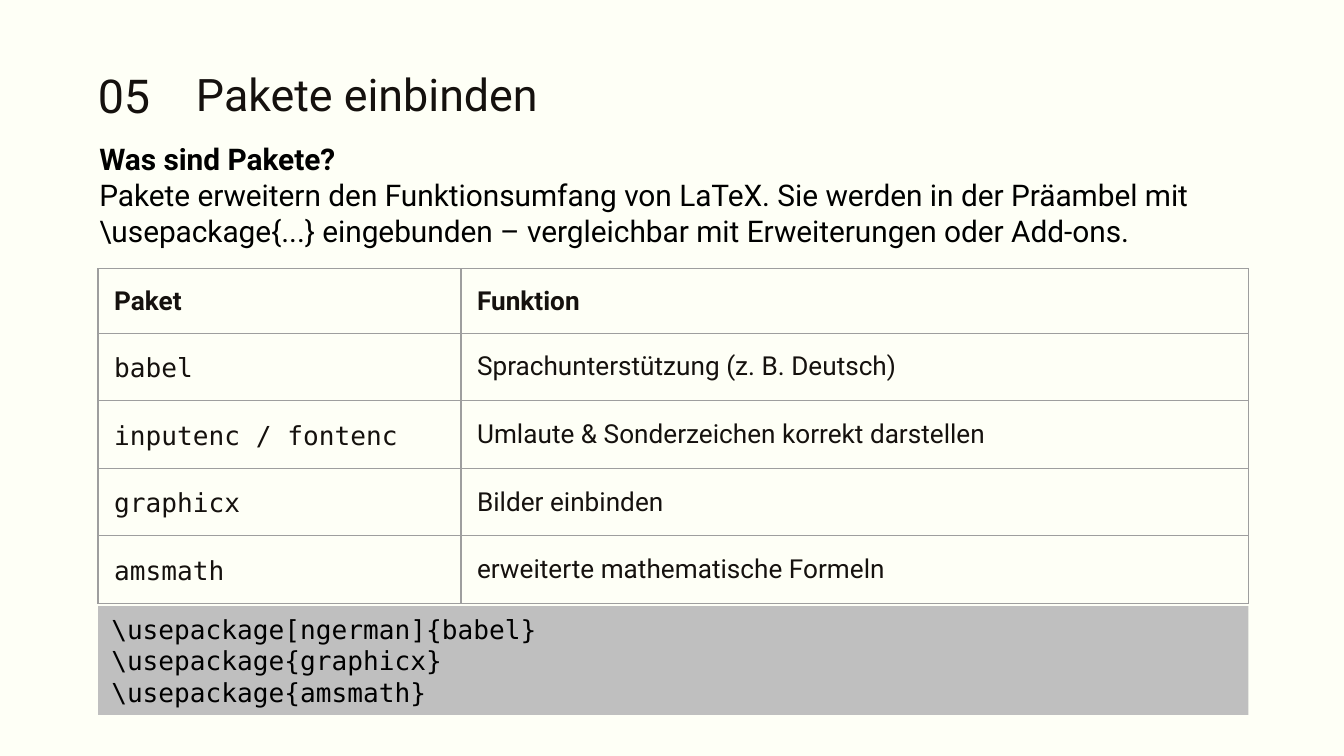
from lxml import etree
from pptx import Presentation
from pptx.dml.color import RGBColor
from pptx.enum.shapes import MSO_SHAPE
from pptx.enum.text import MSO_ANCHOR, PP_ALIGN
from pptx.oxml.ns import qn
from pptx.util import Inches, Pt

RECT = MSO_SHAPE.RECTANGLE
TOP, MIDDLE = MSO_ANCHOR.TOP, MSO_ANCHOR.MIDDLE
LEFT = PP_ALIGN.LEFT
SANS, MONO = "Roboto", "DejaVu Sans Mono"
PAPER, INK, BLACK = "FEFFF6", "15110E", "000000"
GRID, CODE_FILL = "9E9E9E", "BFBFBF"
SLIDE_W = 10
SLIDE_H = SLIDE_W * 9 / 16

PACKAGES = [
    ("Paket", "Funktion"),
    ("babel", "Sprachunterstützung (z. B. Deutsch)"),
    ("inputenc\u00a0/\u00a0fontenc", "Umlaute & Sonderzeichen korrekt darstellen"),
    ("graphicx", "Bilder einbinden"),
    ("amsmath", "erweiterte mathematische Formeln"),
]
INTRO = [
    "Was sind Pakete?",
    "Pakete erweitern den Funktionsumfang von LaTeX. Sie werden in der Präambel mit "
    "\\usepackage{...} eingebunden – vergleichbar mit Erweiterungen oder Add-ons.",
]
CODE = ["\\usepackage[ngerman]{babel}", "\\usepackage{graphicx}", "\\usepackage{amsmath}"]


def rgb(color):
    return RGBColor.from_string(color)


def style(p, size, font=SANS, color=INK, bold=False):
    p.alignment = LEFT
    for r in p.runs:
        r.font.size = Pt(size)
        r.font.name = font
        r.font.bold = bold
        r.font.color.rgb = rgb(color)


def add_text(s, box, lines, size, color=INK, pad=0.1):
    tb = s.shapes.add_textbox(*map(Inches, box))
    tf = tb.text_frame
    tf.word_wrap = True
    tf.vertical_anchor = TOP
    tf.margin_top = tf.margin_bottom = Inches(pad)
    tf.text = "\n".join(lines)
    for p in tf.paragraphs:
        style(p, size, color=color)
    return tf


def add_heading(s, box, number, title):
    x, y, w, h = box
    number_w = 0.73
    add_text(s, (x + number_w, y, w - number_w, h), [title], 24)
    add_text(s, (x, y, number_w, h), [number], 25)


def add_intro(s, box):
    tf = add_text(s, box, INTRO, 16, BLACK, pad=0.05)
    tf.paragraphs[0].runs[0].font.bold = True


def set_borders(cell, color, width):
    tc_pr = cell._tc.get_or_add_tcPr()
    for i, side in enumerate(("a:lnL", "a:lnR", "a:lnT", "a:lnB")):
        ln = etree.Element(qn(side), w=str(Pt(width)))
        fill = etree.SubElement(ln, qn("a:solidFill"))
        etree.SubElement(fill, qn("a:srgbClr"), val=color)
        tc_pr.insert(i, ln)


def add_package_table(s, box):
    x, y, w, h = box
    name_w, header_h = 2.7, 0.48
    row_h = (h - header_h) / (len(PACKAGES) - 1)
    frame = s.shapes.add_table(len(PACKAGES), 2, *map(Inches, box))
    table = frame.table
    table.first_row = table.horz_banding = False
    table.columns[0].width = Inches(name_w)
    table.columns[1].width = Inches(w - name_w)
    for i, texts in enumerate(PACKAGES):
        header = i == 0
        table.rows[i].height = Inches(header_h if header else row_h)
        for j, text in enumerate(texts):
            cell = table.cell(i, j)
            cell.fill.background()
            set_borders(cell, GRID, 0.75)
            cell.vertical_anchor = MIDDLE
            cell.margin_left = cell.margin_right = Inches(0.12)
            cell.margin_top = cell.margin_bottom = Inches(0.12)
            cell.text = text
            p = cell.text_frame.paragraphs[0]
            is_name = j == 0 and not header
            style(p, 14, MONO if is_name else SANS, bold=header)
            if is_name:
                p.line_spacing = Pt(18)


def add_code(s, box):
    sp = s.shapes.add_shape(RECT, *map(Inches, box))
    sp.shadow.inherit = False
    sp.fill.solid()
    sp.fill.fore_color.rgb = rgb(CODE_FILL)
    sp.line.fill.background()
    tf = sp.text_frame
    tf.word_wrap = True
    tf.vertical_anchor = MIDDLE
    tf.text = "\n".join(CODE)
    for p in tf.paragraphs:
        style(p, 14, MONO, BLACK)


def main():
    prs = Presentation()
    prs.slide_width, prs.slide_height = Inches(SLIDE_W), Inches(SLIDE_H)
    s = prs.slides.add_slide(prs.slide_layouts[6])
    s.background.fill.solid()
    s.background.fill.fore_color.rgb = rgb(PAPER)
    add_intro(s, (0.64, 1, 8.72, 0.91))
    add_package_table(s, (0.73, 2, 8.56, 2.49))
    add_code(s, (0.73, 4.51, 8.56, 0.81))
    add_heading(s, (0.63, 0.4, 8.44, 0.6), "05", "Pakete einbinden")
    prs.save("out.pptx")


if __name__ == "__main__":
    main()
